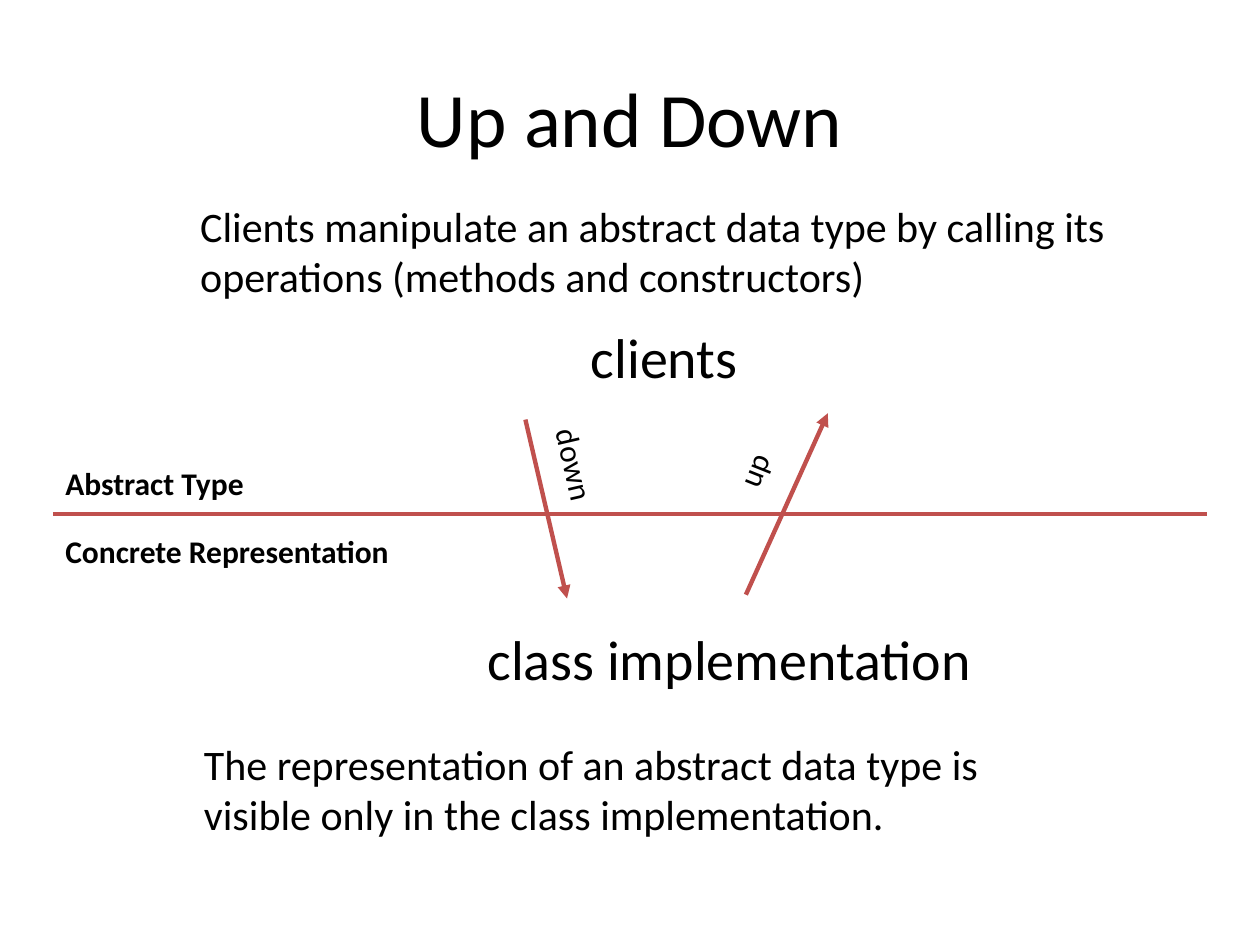
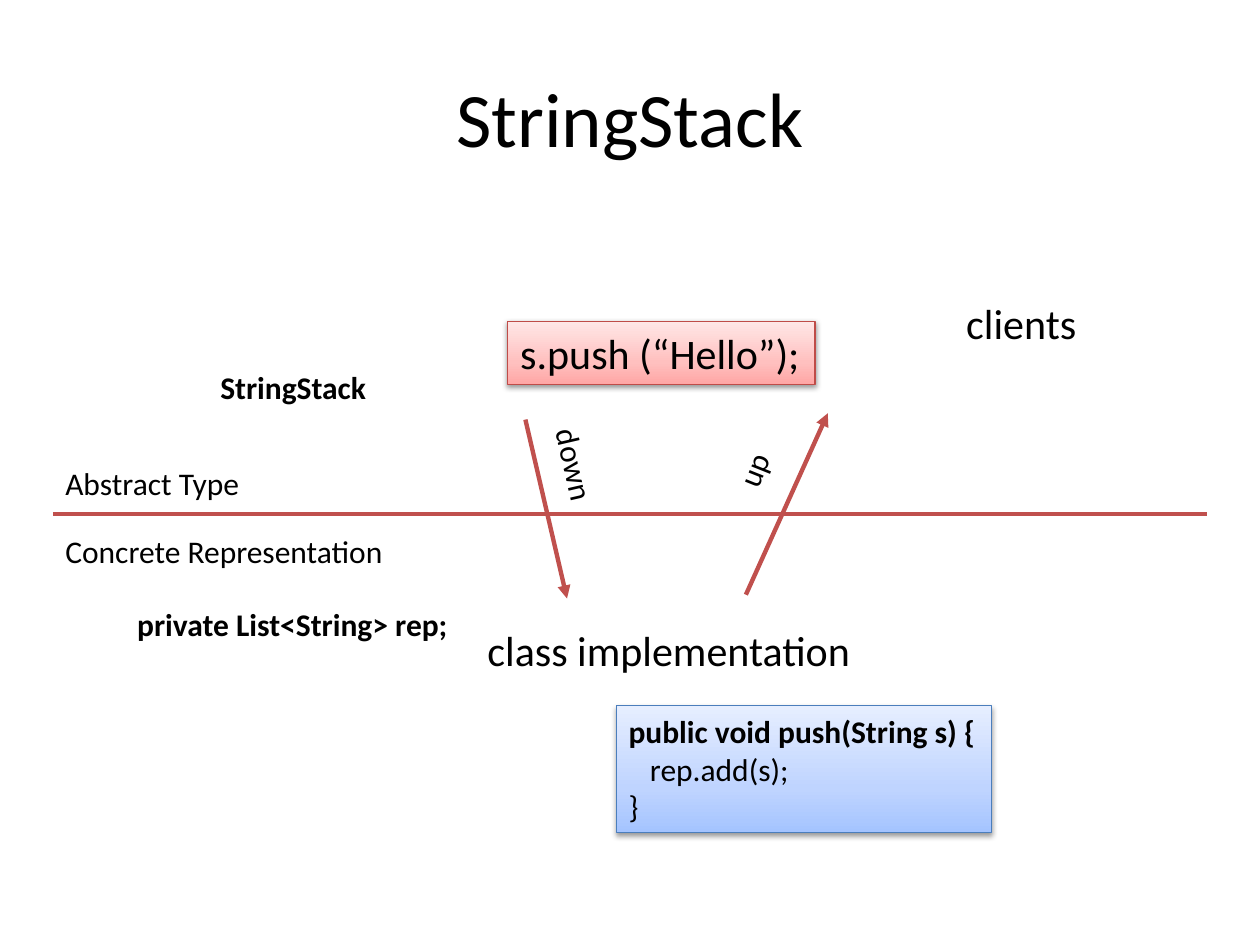
"""Build two slides on how clients and class implementations share an abstract type."""

from dataclasses import dataclass

from lxml.etree import SubElement
from pptx import Presentation
from pptx.dml.color import RGBColor
from pptx.enum.shapes import MSO_CONNECTOR, MSO_SHAPE
from pptx.enum.text import MSO_ANCHOR, PP_ALIGN
from pptx.oxml import parse_xml
from pptx.oxml.ns import nsdecls, qn
from pptx.util import Inches, Pt


@dataclass(frozen=True)
class Theme:
    font: str = "Calibri"
    ink: str = "000000"
    accent: str = "C0504D"
    red_border: str = "BF4C48"
    red_stops: tuple = ("FFA6A5", "FFC0BF", "FFE7E7")
    blue_border: str = "4B7EBC"
    blue_stops: tuple = ("A4C4FF", "BFD4FF", "E6EEFF")
    stop_positions: tuple = (0, 35000, 100000)
    title: int = 44
    heading: int = 32
    body: int = 24
    label: int = 18


theme = Theme()


def write(shape, text, size, bold=False, wrap=False, align=PP_ALIGN.LEFT, anchor=MSO_ANCHOR.TOP):
    frame = shape.text_frame
    frame.text = text
    frame.word_wrap = wrap
    frame.vertical_anchor = anchor
    for paragraph in frame.paragraphs:
        paragraph.alignment = align
        for run in paragraph.runs:
            run.font.name = theme.font
            run.font.size = Pt(size)
            run.font.bold = bold
            run.font.color.rgb = RGBColor.from_string(theme.ink)


def draw_line(slide, start, end, arrow):
    line = slide.shapes.add_connector(MSO_CONNECTOR.STRAIGHT, *map(Inches, start + end))
    line.line.color.rgb = RGBColor.from_string(theme.accent)
    line.line.width = Pt(2.5)
    if arrow:
        SubElement(line.line._get_or_add_ln(), qn("a:tailEnd"), type="triangle")
    SubElement(line._element.spPr, qn("a:effectLst"))


presentation = Presentation()
presentation.slide_width = Inches(10)
presentation.slide_height = Inches(7.5)

boundary_and_calls = [
    ((0.42, 4.08), (9.58, 4.08), False),
    ((4.17, 3.33), (4.5, 4.75), True),
    ((5.92, 4.72), (6.57, 3.28), True),
]
call_directions = [
    ("down", (4.17, 3.5, 0.8, 0.4), 77),
    ("up", (5.74, 3.52, 0.48, 0.4), 291.8),
]

topics = [
    {
        "title": "Up and Down",
        "sides_bold": True,
        "side_widths": (1.63, 2.79),
        "role_size": theme.heading,
        "roles": [
            ("class implementation", (3.77, 4.91, 4.09, 0.64)),
            ("clients", (4.59, 2.51, 1.38, 0.64)),
        ],
        "explanations": [
            ("The representation of an abstract data type is visible only in the class implementation.",
             (1.52, 5.81, 6.4, 0.91)),
            ("Clients manipulate an abstract data type by calling its operations (methods and constructors)",
             (1.49, 1.54, 7.67, 0.9)),
        ],
        "declarations": [],
    },
    {
        "title": "StringStack",
        "sides_bold": False,
        "side_widths": (1.74, 2.98),
        "role_size": theme.body,
        "roles": [
            ("class implementation", (3.77, 4.91, 3.32, 0.5)),
            ("clients", (7.57, 2.31, 1.15, 0.5)),
        ],
        "explanations": [],
        "declarations": [
            ("StringStack", (1.65, 2.87, 1.37, 0.4)),
            ("private List<String> rep;", (0.99, 4.75, 2.69, 0.4)),
        ],
    },
]

for topic in topics:
    slide = presentation.slides.add_slide(presentation.slide_layouts[6])
    title = slide.shapes.add_textbox(*map(Inches, (0.5, 0.3, 9, 1.25)))
    write(title, topic["title"], theme.title, wrap=True, align=PP_ALIGN.CENTER, anchor=MSO_ANCHOR.MIDDLE)

    for start, end, arrow in boundary_and_calls:
        draw_line(slide, start, end, arrow)

    sides = zip(("Abstract Type", "Concrete Representation"), (3.63, 4.17), topic["side_widths"])
    for side, top, width in sides:
        side_label = slide.shapes.add_textbox(*map(Inches, (0.42, top, width, 0.4)))
        write(side_label, side, theme.label, bold=topic["sides_bold"])

    for role, box in topic["roles"]:
        write(slide.shapes.add_textbox(*map(Inches, box)), role, topic["role_size"])

    for direction, box, rotation in call_directions:
        direction_label = slide.shapes.add_textbox(*map(Inches, box))
        direction_label.rotation = rotation
        write(direction_label, direction, theme.label)

    for explanation, box in topic["explanations"]:
        write(slide.shapes.add_textbox(*map(Inches, box)), explanation, theme.body, wrap=True)

    for declaration, box in topic["declarations"]:
        write(slide.shapes.add_textbox(*map(Inches, box)), declaration, theme.label, bold=True)

code_samples = [
    ("s.push (“Hello”);", (4.03, 2.55, 2.44, 0.5), theme.body, theme.red_border, theme.red_stops),
    ("public void push(String s) {\nrep.add(s);\n}", (4.89, 5.6, 2.98, 1.01), theme.label,
     theme.blue_border, theme.blue_stops),
]
for code, box, size, border, colours in code_samples:
    code_panel = slide.shapes.add_shape(MSO_SHAPE.RECTANGLE, *map(Inches, box))
    code_panel.line.color.rgb = RGBColor.from_string(border)
    code_panel.line.width = Pt(0.75)
    code_panel.fill.background()
    stops = "".join(
        f'<a:gs pos="{position}"><a:srgbClr val="{colour}"/></a:gs>'
        for position, colour in zip(theme.stop_positions, colours)
    )
    gradient = parse_xml(
        f'<a:gradFill {nsdecls("a")} rotWithShape="1"><a:gsLst>{stops}</a:gsLst>'
        '<a:lin ang="16200000" scaled="0"/></a:gradFill>'
    )
    properties = code_panel._element.spPr
    properties.replace(properties.find(qn("a:noFill")), gradient)
    properties.append(parse_xml(
        f'<a:effectLst {nsdecls("a")}><a:outerShdw blurRad="{Pt(3.1)}" dist="{Pt(1.6)}" dir="5400000" '
        'rotWithShape="0"><a:srgbClr val="000000"><a:alpha val="38000"/></a:srgbClr>'
        '</a:outerShdw></a:effectLst>'
    ))
    write(code_panel, code, size)

signature, statement, closing = code_panel.text_frame.paragraphs
signature.runs[0].font.bold = True
statement._p.get_or_add_pPr().set("marL", str(Inches(0.17)))

presentation.save("out.pptx")
